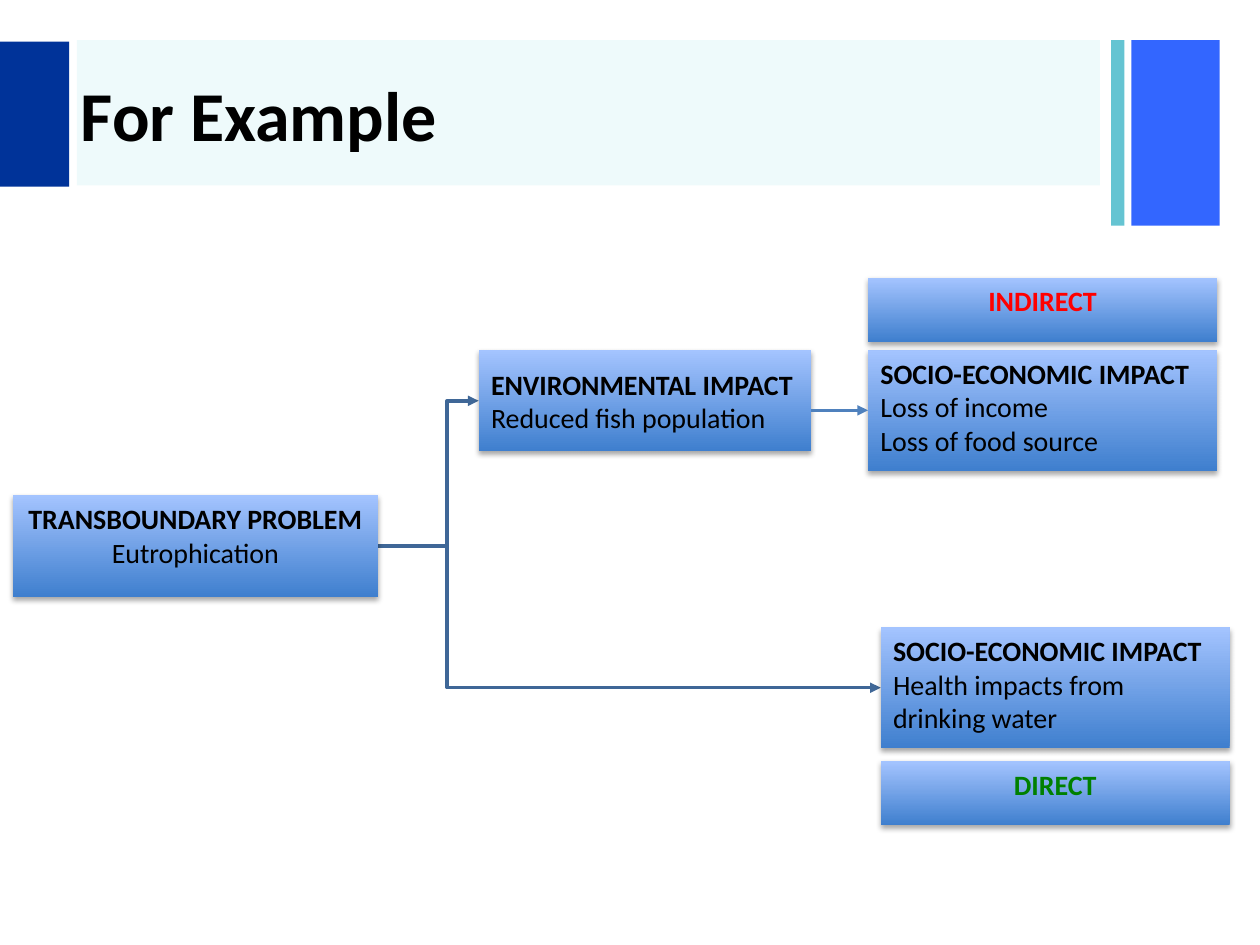
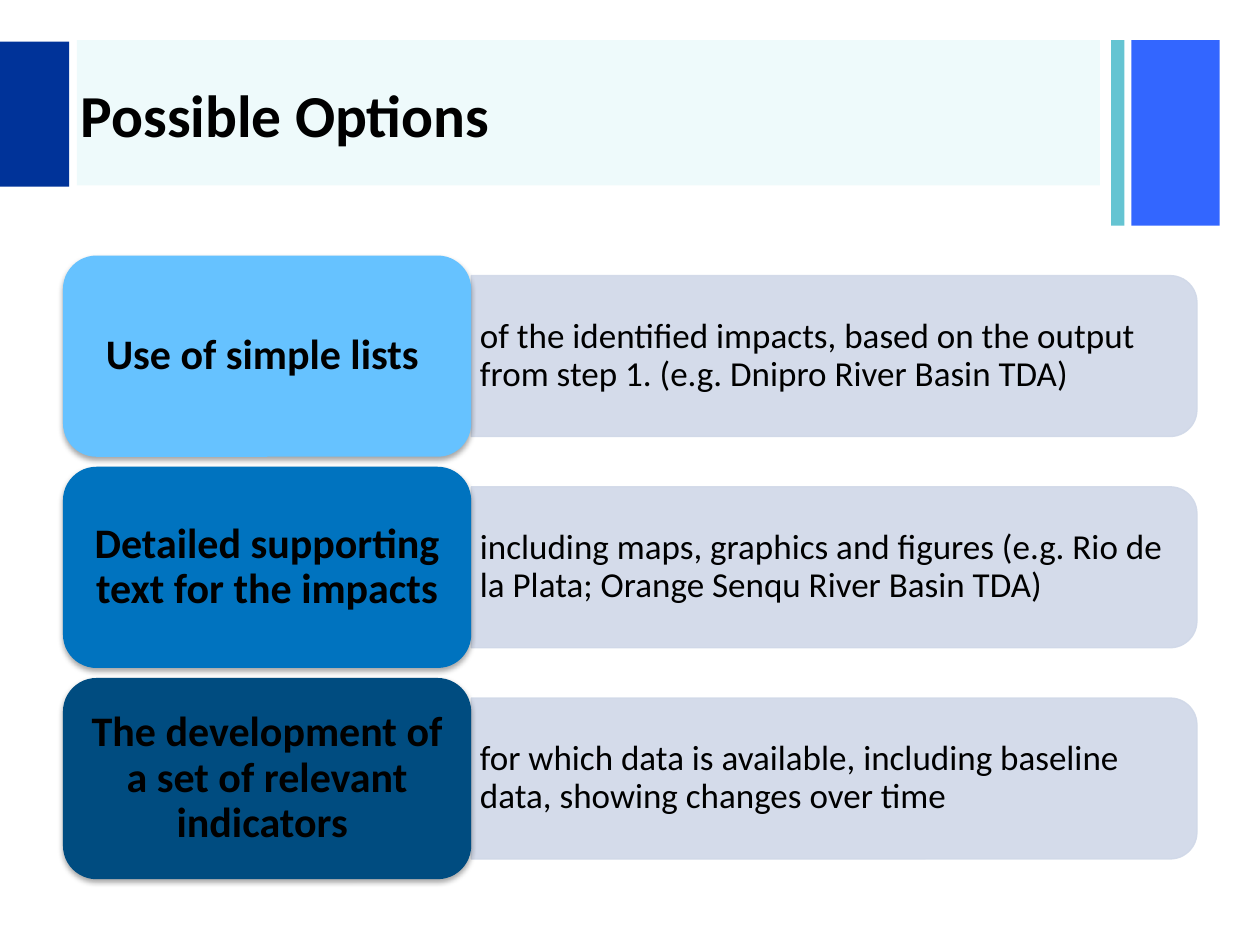
import dataclasses
import typing

import lxml.etree
import pptx
import pptx.dml.color
import pptx.enum.shapes
import pptx.enum.text
import pptx.oxml.ns
import pptx.util

Pt = pptx.util.Pt
qn = pptx.oxml.ns.qn
Preset = pptx.enum.shapes.MSO_SHAPE
Align = pptx.enum.text.PP_ALIGN
Anchor = pptx.enum.text.MSO_ANCHOR

FONT = "Calibri"
COLOURS = {
    "text": "000000",
    "shadow": "000000",
    "navy": "003399",
    "blue": "3366FF",
    "teal": "65C4D2",
    "title_tint": "14C5D0",
    "box_bottom": "3F7FCE",
    "box_top": "A4C4FF",
    "elbow": "3F6797",
    "arrow": "4F81BD",
    "indirect": "FF0000",
    "direct": "008000",
    "detail": "D0D8E8",
    "option_light": "66C2FF",
    "option_medium": "0073BF",
    "option_dark": "004C80",
}


@dataclasses.dataclass(frozen=True)
class Area:
    left: float
    top: float
    width: float
    height: float

    @property
    def right(self) -> float:
        return self.left + self.width

    @property
    def middle(self) -> float:
        return self.top + self.height / 2

    def lengths(self) -> tuple:
        return Pt(self.left), Pt(self.top), Pt(self.width), Pt(self.height)


class Band(typing.NamedTuple):
    area: Area
    colour: str
    opacity: int = 100


class Run(typing.NamedTuple):
    text: str
    bold: bool = False


class ImpactBox(typing.NamedTuple):
    area: Area
    paragraphs: list
    align: typing.Any = Align.LEFT
    anchor: typing.Any = Anchor.TOP
    colour: str = "text"


class Option(typing.NamedTuple):
    name: str
    detail: str
    colour: str


BANDS = [
    Band(Area(646.5, 23, 50.5, 106), "blue"),
    Band(Area(635, 23, 7.5, 106), "teal"),
    Band(Area(44, 23, 584.5, 83), "title_tint", 7),
    Band(Area(0, 23.75, 39.5, 83), "navy"),
]
TITLE_AREA = Area(39, 24.5, 595.5, 80.5)

IMPACT_WIDTH, IMPACT_HEIGHT, LABEL_HEIGHT = 199.5, 69, 36.5
INDIRECT_LEFT, DIRECT_LEFT = 496, 503.25
TRUNK_X = 255.6
IMPACT_BOXES = {
    "problem": ImpactBox(
        Area(7.3, 283, 208.7, 58.3),
        [[Run("TRANSBOUNDARY PROBLEM ", True), Run("Eutrophication")]],
        align=Align.CENTER,
    ),
    "environment": ImpactBox(
        Area(273.5, 200, 190, 58),
        [[Run("ENVIRONMENTAL IMPACT ", True), Run("Reduced fish population")]],
        anchor=Anchor.MIDDLE,
    ),
    "indirect_impact": ImpactBox(
        Area(INDIRECT_LEFT, 200, IMPACT_WIDTH, IMPACT_HEIGHT),
        [[Run("SOCIO-ECONOMIC IMPACT", True)], [Run("Loss of income")], [Run("Loss of food source")]],
    ),
    "direct_impact": ImpactBox(
        Area(DIRECT_LEFT, 358.5, IMPACT_WIDTH, IMPACT_HEIGHT),
        [[Run("SOCIO-ECONOMIC IMPACT", True)], [Run("Health impacts from drinking water")]],
    ),
    "indirect_label": ImpactBox(
        Area(INDIRECT_LEFT, 158.75, IMPACT_WIDTH, LABEL_HEIGHT),
        [[Run("INDIRECT", True)]], align=Align.CENTER, colour="indirect",
    ),
    "direct_label": ImpactBox(
        Area(DIRECT_LEFT, 435, IMPACT_WIDTH, LABEL_HEIGHT),
        [[Run("DIRECT", True)]], align=Align.CENTER, colour="direct",
    ),
}

OPTION_PITCH = 120.7
OPTION_AREA = Area(36, 146, 233.3, 115)
DETAIL_AREA = Area(269.3, 157.5, 414.7, 92)
DETAIL_TEXT_WIDTH = 410.5
OPTIONS = [
    Option(
        "Use of simple lists ",
        "of the identified impacts, based on the output from step 1. (e.g. Dnipro River Basin TDA)",
        "option_light",
    ),
    Option(
        "Detailed supporting text for the impacts",
        "including maps, graphics and figures (e.g. Rio de la Plata; Orange Senqu River Basin TDA)",
        "option_medium",
    ),
    Option(
        "The development of a set of relevant indicators ",
        "for which data is available, including baseline data, showing changes over time",
        "option_dark",
    ),
]


def rgb(name: str) -> pptx.dml.color.RGBColor:
    return pptx.dml.color.RGBColor.from_string(COLOURS[name])


def write_text(shape, paragraphs, *, size, colour="text", align=Align.LEFT, anchor=Anchor.MIDDLE,
               line_spacing=None, insets=(7.2, 3.6)) -> None:
    frame = shape.text_frame
    frame.word_wrap = True
    frame.vertical_anchor = anchor
    frame.margin_left = frame.margin_right = Pt(insets[0])
    frame.margin_top = frame.margin_bottom = Pt(insets[1])
    for index, runs in enumerate(paragraphs):
        paragraph = frame.add_paragraph() if index else frame.paragraphs[0]
        paragraph.alignment = align
        if line_spacing:
            paragraph.line_spacing = line_spacing
        for item in runs:
            run = paragraph.add_run()
            run.text = item.text
            run.font.name = FONT
            run.font.size = Pt(size)
            run.font.bold = item.bold
            run.font.color.rgb = rgb(colour)


def set_opacity(shape, percent: int) -> None:
    for colour in shape.element.spPr.iter(qn("a:srgbClr")):
        lxml.etree.SubElement(colour, qn("a:alpha"), val=str(percent * 1000))


def add_shadow(shape) -> None:
    effects = shape.element.spPr.find(qn("a:effectLst"))
    shadow = lxml.etree.SubElement(
        effects, qn("a:outerShdw"), blurRad=str(Pt(3.1)), dist=str(Pt(1.8)), dir="5400000", rotWithShape="0"
    )
    colour = lxml.etree.SubElement(shadow, qn("a:srgbClr"), val=COLOURS["shadow"])
    lxml.etree.SubElement(colour, qn("a:alpha"), val="35000")


def add_block(slide, area: Area, colour: typing.Optional[str] = None, preset=Preset.RECTANGLE):
    shape = slide.shapes.add_shape(preset, *area.lengths())
    shape.shadow.inherit = False
    shape.line.fill.background()
    if colour:
        shape.fill.solid()
        shape.fill.fore_color.rgb = rgb(colour)
    return shape


def add_titled_slide(presentation, title: str, size: float):
    slide = presentation.slides.add_slide(presentation.slide_layouts[5])
    for band in BANDS:
        shape = add_block(slide, band.area, band.colour)
        if band.opacity < 100:
            set_opacity(shape, band.opacity)
    heading = slide.shapes.title
    heading.left, heading.top, heading.width, heading.height = TITLE_AREA.lengths()
    write_text(heading, [[Run(title, True)]], size=size)
    heading.element.getparent().append(heading.element)
    return slide


def style_arrow(line_shape, colour: str) -> None:
    line_shape.line.color.rgb = rgb(colour)
    line_shape.line.width = Pt(2)
    outline = line_shape.element.spPr.find(qn("a:ln"))
    lxml.etree.SubElement(outline, qn("a:tailEnd"), type="triangle")


def add_elbow(slide, source: Area, target: Area) -> None:
    start, *corners = [
        (Pt(x), Pt(y))
        for x, y in [
            (source.right, source.middle),
            (TRUNK_X, source.middle),
            (TRUNK_X, target.middle),
            (target.left, target.middle),
        ]
    ]
    builder = slide.shapes.build_freeform(*start)
    builder.add_line_segments(corners, close=False)
    elbow = builder.convert_to_shape()
    elbow.shadow.inherit = False
    elbow.fill.background()
    style_arrow(elbow, "elbow")


def add_straight_arrow(slide, source: Area, target: Area, target_shape) -> None:
    connector = slide.shapes.add_connector(
        pptx.enum.shapes.MSO_CONNECTOR.STRAIGHT,
        Pt(source.right), Pt(target.middle), Pt(target.left), Pt(target.middle),
    )
    connector.end_connect(target_shape, 1)
    style_arrow(connector, "arrow")
    lxml.etree.SubElement(connector.element.spPr, qn("a:effectLst"))


def add_impact_box(slide, box: ImpactBox):
    shape = add_block(slide, box.area)
    shape.fill.gradient()
    shape.fill.gradient_angle = 90
    for stop, colour in zip(shape.fill.gradient_stops, ("box_bottom", "box_top")):
        stop.color.rgb = rgb(colour)
    add_shadow(shape)
    write_text(shape, box.paragraphs, size=16, colour=box.colour, align=box.align, anchor=box.anchor)
    return shape


def add_option(slide, option: Option, offset: float) -> None:
    detail_area = dataclasses.replace(DETAIL_AREA, top=DETAIL_AREA.top + offset)
    upright = Area(
        detail_area.left + (detail_area.width - detail_area.height) / 2,
        detail_area.middle - detail_area.width / 2,
        detail_area.height,
        detail_area.width,
    )
    panel = add_block(slide, upright, "detail", Preset.ROUND_2_SAME_RECTANGLE)
    panel.rotation = 90
    panel.line.color.rgb = rgb("detail")
    panel.line.width = Pt(0.75)
    set_opacity(panel, 90)

    text_area = dataclasses.replace(detail_area, width=DETAIL_TEXT_WIDTH)
    text_box = slide.shapes.add_textbox(*text_area.lengths())
    write_text(text_box, [[Run(option.detail)]], size=20, line_spacing=0.9, insets=(5, 2.5))

    card_area = dataclasses.replace(OPTION_AREA, top=OPTION_AREA.top + offset)
    card = add_block(slide, card_area, option.colour, Preset.ROUNDED_RECTANGLE)
    add_shadow(card)
    write_text(card, [[Run(option.name, True)]], size=24, align=Align.CENTER, line_spacing=0.9, insets=(6, 3))


def build_example(presentation) -> None:
    slide = add_titled_slide(presentation, "For Example", 40)
    areas = {name: box.area for name, box in IMPACT_BOXES.items()}
    for target in ("direct_impact", "environment"):
        add_elbow(slide, areas["problem"], areas[target])
    shapes = {name: add_impact_box(slide, box) for name, box in IMPACT_BOXES.items()}
    add_straight_arrow(slide, areas["environment"], areas["indirect_impact"], shapes["indirect_impact"])


def build_options(presentation) -> None:
    slide = add_titled_slide(presentation, "Possible Options", 34)
    for row, option in enumerate(OPTIONS):
        add_option(slide, option, row * OPTION_PITCH)


def main() -> None:
    presentation = pptx.Presentation()
    presentation.slide_width, presentation.slide_height = Pt(720), Pt(540)
    build_example(presentation)
    build_options(presentation)
    presentation.save("out.pptx")


if __name__ == "__main__":
    main()
